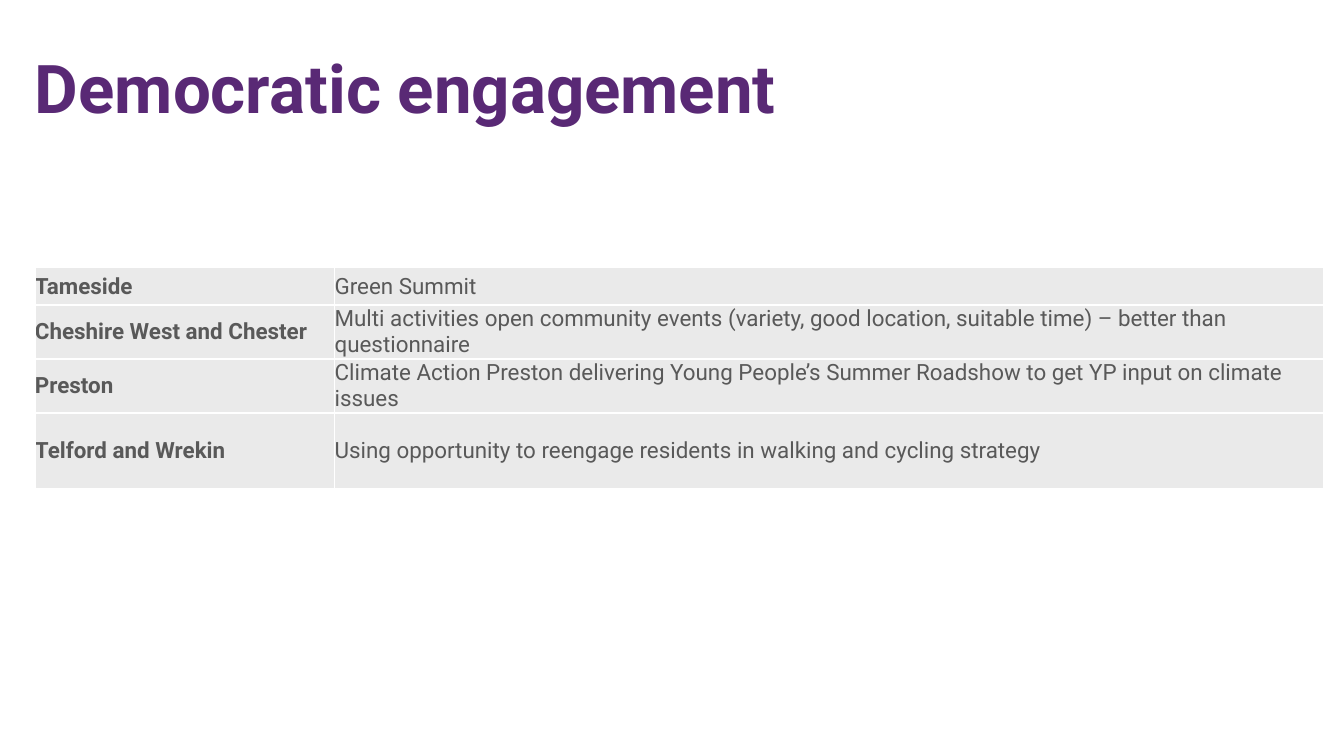
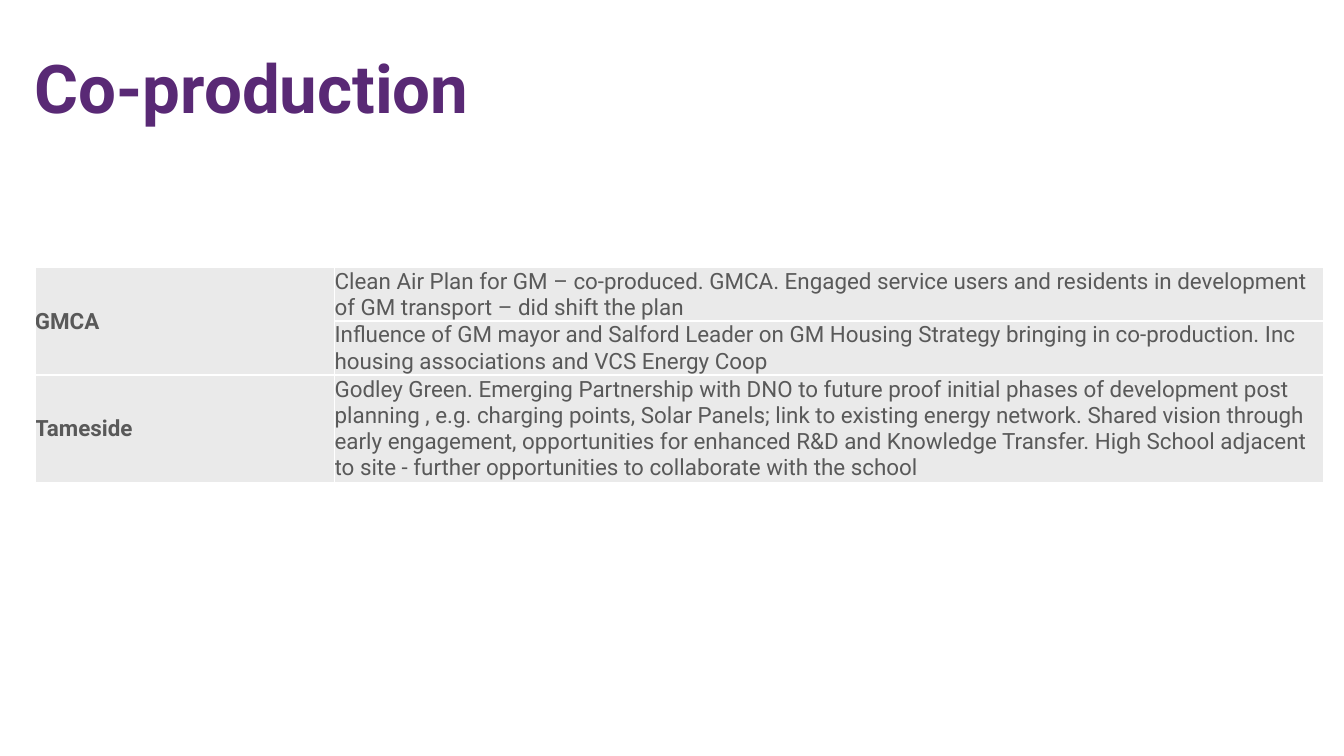
from lxml.etree import SubElement
from pptx import Presentation
from pptx.dml.color import RGBColor
from pptx.enum.text import MSO_ANCHOR, MSO_AUTO_SIZE, PP_ALIGN
from pptx.oxml.ns import qn
from pptx.util import Inches, Pt

COLORS = {"title": "592975", "text": "595959", "cell": "EAEAEA", "border": "FFFFFF"}
FONT = "Roboto"
COLUMN_WIDTHS = (2.23, 7.36)
ROW_HEIGHT = 0.28

ENGAGEMENT_ROWS = [
    ("Tameside", "Green Summit"),
    ("Cheshire West and Chester",
     "Multi activities open community events (variety, good location, "
     "suitable time) – better than questionnaire"),
    ("Preston",
     "Climate Action Preston delivering Young People’s Summer Roadshow "
     "to get YP input on climate issues"),
    ("Telford and Wrekin",
     "Using opportunity to reengage residents in walking and cycling strategy"),
]
COPRODUCTION_ROWS = [
    ("GMCA",
     "Clean Air Plan for GM – co-produced. GMCA. Engaged service users and "
     "residents in development of GM transport – did shift the plan"),
    (None,
     "Influence of GM mayor and Salford Leader on GM Housing Strategy bringing "
     "in co-production. Inc housing associations and VCS Energy Coop"),
    ("Tameside",
     "Godley Green. Emerging Partnership with DNO to future proof initial phases "
     "of development post planning , e.g. charging points, Solar Panels; link to "
     "existing energy network. Shared vision through early engagement, "
     "opportunities for enhanced R&D and Knowledge Transfer. High School adjacent "
     "to site - further opportunities to collaborate with the school"),
]


def write_text(text_frame, text, size=12, color="text", bold=False):
    """Write one left-aligned paragraph in the given format."""
    paragraph = text_frame.paragraphs[0]
    paragraph.alignment = PP_ALIGN.LEFT
    run = paragraph.add_run()
    run.text = text
    run.font.name = FONT
    run.font.size = Pt(size)
    run.font.bold = bold
    run.font.color.rgb = RGBColor.from_string(COLORS[color])


def add_titled_slide(presentation, title, title_width):
    """Add a title-only slide with a formatted title."""
    slide = presentation.slides.add_slide(presentation.slide_layouts[5])
    shape = slide.shapes.title
    shape.left, shape.top = Inches(0.16), Inches(0.29)
    shape.width, shape.height = Inches(title_width), Inches(0.71)
    text_frame = shape.text_frame
    text_frame.word_wrap = False
    text_frame.auto_size = MSO_AUTO_SIZE.SHAPE_TO_FIT_TEXT
    write_text(text_frame, title, size=36, color="title", bold=True)
    return slide


def style_cell(cell):
    """Give a cell its borders, fill, anchor and zero margins."""
    properties = cell._tc.get_or_add_tcPr()
    for side in ("lnL", "lnR", "lnT", "lnB"):
        line = SubElement(properties, qn(f"a:{side}"), w=str(Pt(1)))
        fill = SubElement(line, qn("a:solidFill"))
        SubElement(fill, qn("a:srgbClr"), val=COLORS["border"])
    cell.fill.solid()
    cell.fill.fore_color.rgb = RGBColor.from_string(COLORS["cell"])
    cell.vertical_anchor = MSO_ANCHOR.MIDDLE
    cell.margin_left = cell.margin_right = 0
    cell.margin_top = cell.margin_bottom = 0


def add_place_table(slide, rows, last_height=ROW_HEIGHT):
    """Add a table of places and activities; a label of None joins the cell above."""
    heights = [ROW_HEIGHT] * (len(rows) - 1) + [last_height]
    table = slide.shapes.add_table(
        len(rows), len(COLUMN_WIDTHS), Inches(0.26), Inches(1.99),
        Inches(sum(COLUMN_WIDTHS)), Inches(sum(heights))).table
    table.first_row = table.horz_banding = False
    for column, width in zip(table.columns, COLUMN_WIDTHS):
        column.width = Inches(width)
    for index, (values, height) in enumerate(zip(rows, heights)):
        table.rows[index].height = Inches(height)
        for position, value in enumerate(values):
            cell = table.cell(index, position)
            style_cell(cell)
            if value is None:
                table.cell(index - 1, position).merge(cell)
            else:
                write_text(cell.text_frame, value, bold=position == 0)


def main():
    """Build and save the presentation."""
    presentation = Presentation()
    presentation.slide_width = Inches(10)
    presentation.slide_height = Inches(10 * 9 / 16)
    engagement = add_titled_slide(presentation, "Democratic engagement", 5.82)
    add_place_table(engagement, ENGAGEMENT_ROWS, last_height=0.57)
    coproduction = add_titled_slide(presentation, "Co-production", 3.5)
    add_place_table(coproduction, COPRODUCTION_ROWS)
    presentation.save("out.pptx")


if __name__ == "__main__":
    main()
